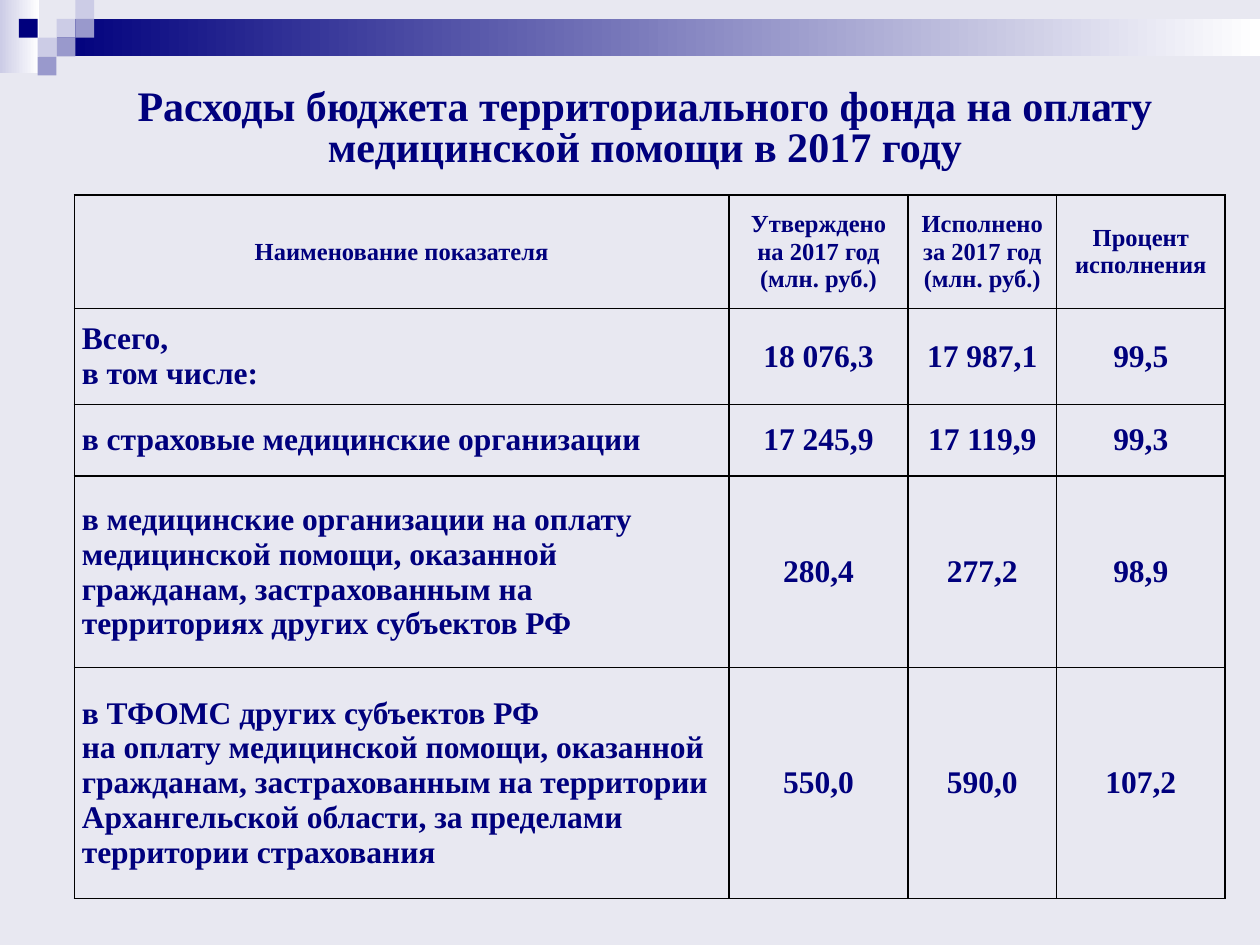
from dataclasses import dataclass

from lxml import etree
from pptx import Presentation
from pptx.dml.color import RGBColor
from pptx.enum import shapes, text
from pptx.oxml.ns import qn
from pptx.util import Cm, Pt


@dataclass(frozen=True)
class Theme:
    font: str = "Times New Roman"
    background: str = "E8E8F1"
    navy: str = "00007D"
    violet: str = "9999CC"
    pale: str = "CCCCE6"
    white: str = "FFFFFF"
    border: str = "000000"
    title_size: int = 24
    header_size: int = 14
    body_size: int = 18


T = Theme()
LEFT, CENTER = text.PP_ALIGN.LEFT, text.PP_ALIGN.CENTER

COLUMNS = [13.19, 3.61, 2.99, 3.4]
ROWS = [2.29, 1.93, 1.45, 3.86, 4.65]
# In cell text "\n" starts a paragraph and "\v" breaks a line.
DATA = [
    ["Наименование показателя",
     "Утверждено\nна 2017 год\n(млн. руб.)",
     "Исполнено за 2017 год\n(млн. руб.)",
     "Процент исполнения"],
    ["Всего,\nв том числе:", "18 076,3", "17 987,1", "99,5"],
    ["в страховые медицинские организации", "17 245,9", "17 119,9", "99,3"],
    ["в медицинские организации на оплату медицинской помощи, оказанной "
     "гражданам, застрахованным на территориях других субъектов РФ",
     "280,4", "277,2", "98,9"],
    ["в ТФОМС других субъектов РФ\vна оплату медицинской помощи, оказанной "
     "гражданам, застрахованным на территории Архангельской области, "
     "за пределами территории страхования",
     "550,0", "590,0", "107,2"],
]


def write(tf, content, size, align=CENTER, spacing=None):
    for i, line in enumerate(content.split("\n")):
        p = tf.paragraphs[0] if i == 0 else tf.add_paragraph()
        p.text = line
        p.alignment = align
        if spacing:
            p.line_spacing = spacing
        for r in p.runs:
            r.font.name = T.font
            r.font.size = Pt(size)
            r.font.bold = True
            r.font.color.rgb = RGBColor.from_string(T.navy)


def add_block(s, x, y, w, h, color, fade_to=None):
    """Add a borderless rectangle, fading left to right if fade_to is given."""
    sp = s.shapes.add_shape(shapes.MSO_SHAPE.RECTANGLE,
                            Cm(x), Cm(y), Cm(w), Cm(h))
    sp.shadow.inherit = False
    sp.line.fill.background()
    if fade_to:
        sp.fill.gradient()
        sp.fill.gradient_angle = 0
        for stop, c in zip(sp.fill.gradient_stops, (color, fade_to)):
            stop.color.rgb = RGBColor.from_string(c)
    else:
        sp.fill.solid()
        sp.fill.fore_color.rgb = RGBColor.from_string(color)


def add_banner(s, x, y, w):
    """Add the top bar with its checkered corner."""
    unit = 0.38
    add_block(s, x, y, 0.79, 1.47, T.pale, T.white)
    add_block(s, x + 3 * unit, y + unit, w - 3 * unit, 2 * unit, T.navy, T.white)
    squares = [(3, 1, T.pale), (4, 0, T.pale), (4, 1, T.violet),
               (2, 2, T.pale), (1, 1, T.navy), (3, 2, T.violet),
               (2, 3, T.violet)]
    for col, row, color in squares:
        add_block(s, x + col * unit, y + row * unit, unit, unit, color)


def place_title(s, x, y, w, h):
    sp = s.shapes.title
    sp.left, sp.top, sp.width, sp.height = Cm(x), Cm(y), Cm(w), Cm(h)
    tf = sp.text_frame
    tf.word_wrap = True
    tf.auto_size = text.MSO_AUTO_SIZE.NONE
    tf.vertical_anchor = text.MSO_ANCHOR.MIDDLE
    write(tf, "Расходы бюджета территориального фонда на оплату "
              "медицинской помощи в 2017 году", T.title_size, spacing=0.8)


def add_borders(cell):
    tc_pr = cell._tc.get_or_add_tcPr()
    for side in ("a:lnL", "a:lnR", "a:lnT", "a:lnB"):
        ln = etree.SubElement(tc_pr, qn(side), w=str(Pt(1)))
        fill = etree.SubElement(ln, qn("a:solidFill"))
        etree.SubElement(fill, qn("a:srgbClr"), val=T.border)


def add_budget_table(s, x, y, w, h):
    table = s.shapes.add_table(len(ROWS), len(COLUMNS),
                               Cm(x), Cm(y), Cm(w), Cm(h)).table
    table.first_row = table.horz_banding = False
    for column, share in zip(table.columns, COLUMNS):
        column.width = Cm(w * share / sum(COLUMNS))
    for row, share in zip(table.rows, ROWS):
        row.height = Cm(h * share / sum(ROWS))
    for i, values in enumerate(DATA):
        for j, value in enumerate(values):
            cell = table.cell(i, j)
            add_borders(cell)
            cell.fill.background()
            cell.vertical_anchor = text.MSO_ANCHOR.MIDDLE
            cell.margin_left = cell.margin_right = Cm(0.15)
            cell.margin_top = cell.margin_bottom = 0
            write(cell.text_frame, value,
                  T.body_size if i else T.header_size,
                  LEFT if i and j == 0 else CENTER)


def main():
    prs = Presentation()
    prs.slide_width, prs.slide_height = Cm(25.4), Cm(19.05)
    s = prs.slides.add_slide(prs.slide_layouts.get_by_name("Title Only"))
    s.background.fill.solid()
    s.background.fill.fore_color.rgb = RGBColor.from_string(T.background)
    add_banner(s, 0, 0, 25.4)
    place_title(s, 1.7, 1.32, 22.6, 2.6)
    add_budget_table(s, 1.5, 3.93, 23.2, 14.18)
    prs.save("out.pptx")


if __name__ == "__main__":
    main()
